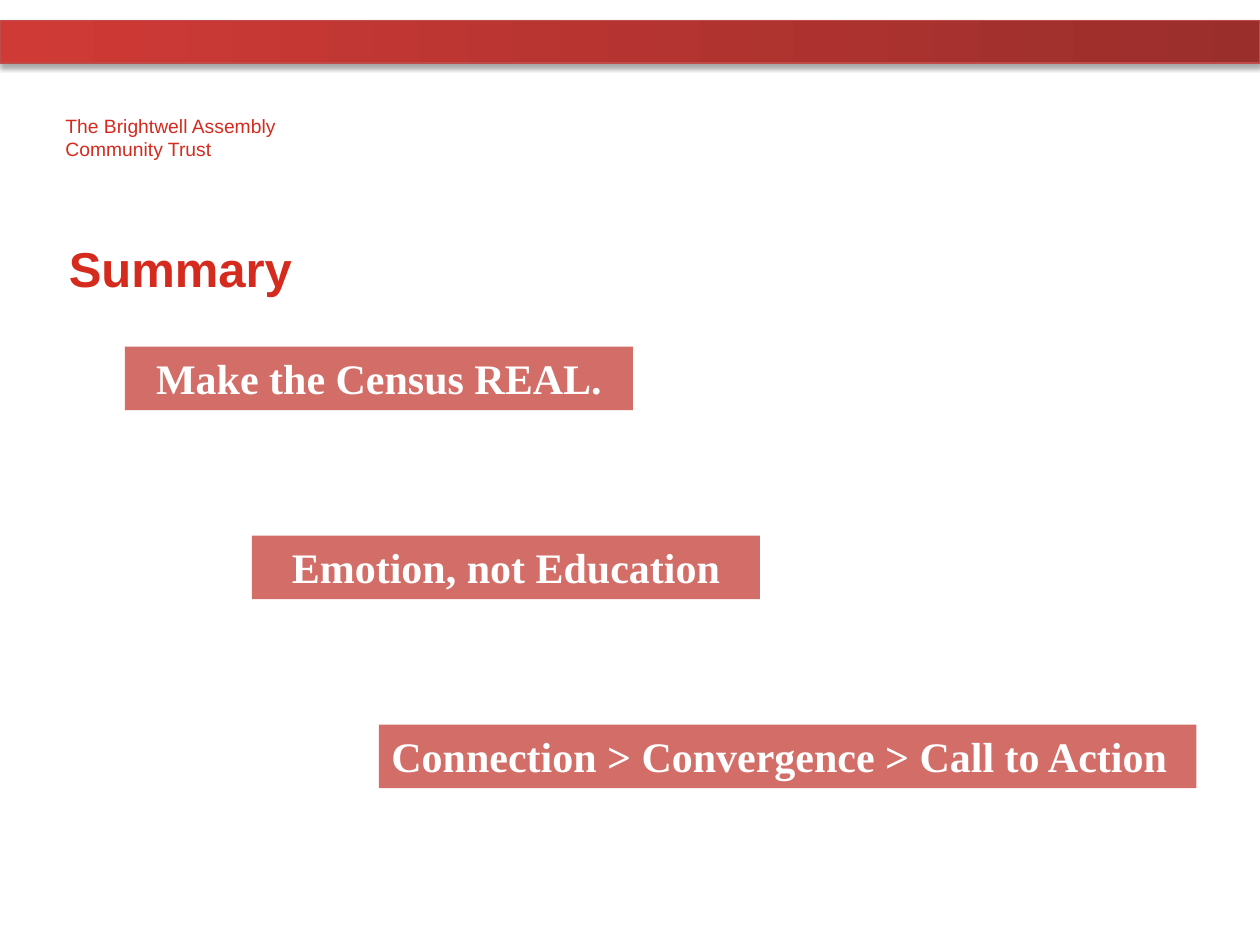
from pptx import Presentation
from pptx import util as u
from pptx.dml.color import RGBColor
from pptx.enum import shapes, text
from pptx.oxml import parse_xml

RED = "D52B1E"
NS = "http://schemas.openxmlformats.org/drawingml/2006/main"


def color(code):
    return RGBColor.from_string(code)


def write(shape, words, size, face, code, bold):
    frame = shape.text_frame
    frame.word_wrap = True
    frame.text = words
    font = frame.paragraphs[0].runs[0].font
    font.size, font.name, font.bold = u.Pt(size), face, bold
    font.color.rgb = color(code)


deck = Presentation()
deck.slide_width, deck.slide_height = u.Cm(25.4), u.Cm(19.05)
slide = deck.slides.add_slide(deck.slide_layouts[6])
items = slide.shapes

fund = items.add_textbox(u.Cm(1.07), u.Cm(2.18), u.Cm(5.25), u.Cm(1.2))
write(fund, "The Brightwell Assembly Community Trust", 11, "Arial", RED, False)

band = items.add_shape(shapes.MSO_SHAPE.RECTANGLE, 0, u.Cm(0.42), deck.slide_width, u.Cm(0.85))
band.fill.gradient()
band.fill.gradient_angle = 0
for stop, code, spot in zip(band.fill.gradient_stops, ("D03A36", "9A2E2B"), (0, 1)):
    stop.color.rgb = color(code)
    stop.position = spot
band.line.color.rgb = color("BF4C48")
band.line.width = u.Pt(0.75)
band.shadow.inherit = False
glow = band.element.spPr.find(f"{{{NS}}}effectLst")
glow.append(parse_xml(
    f'<a:outerShdw xmlns:a="{NS}" blurRad="{u.Pt(3.1)}" dist="{u.Pt(1.8)}" dir="5400000" rotWithShape="0">'
    '<a:srgbClr val="000000"><a:alpha val="35000"/></a:srgbClr></a:outerShdw>'))

title = items.add_textbox(u.Cm(1.14), u.Cm(3.81), u.Cm(22.02), u.Cm(3.18))
write(title, "Summary", 28, "Arial", RED, True)
title.text_frame.vertical_anchor = text.MSO_ANCHOR.MIDDLE

points = [
    ("Make the Census REAL.", 10.24, text.PP_ALIGN.CENTER),
    ("Emotion, not Education", 10.24, text.PP_ALIGN.CENTER),
    ("Connection > Convergence > Call to Action", 16.48, text.PP_ALIGN.LEFT),
]
for step, (words, wide, align) in enumerate(points):
    box = items.add_shape(
        shapes.MSO_SHAPE.RECTANGLE,
        u.Cm(2.52 + 2.56 * step), u.Cm(6.99 + 3.81 * step), u.Cm(wide), u.Cm(1.28))
    box.shadow.inherit = False
    box.fill.solid()
    box.fill.fore_color.rgb = color("D36D67")
    box.line.fill.background()
    write(box, words, 24, "Times New Roman", "FFFFFF", True)
    box.text_frame.vertical_anchor = text.MSO_ANCHOR.TOP
    box.text_frame.paragraphs[0].alignment = align

deck.save("out.pptx")
